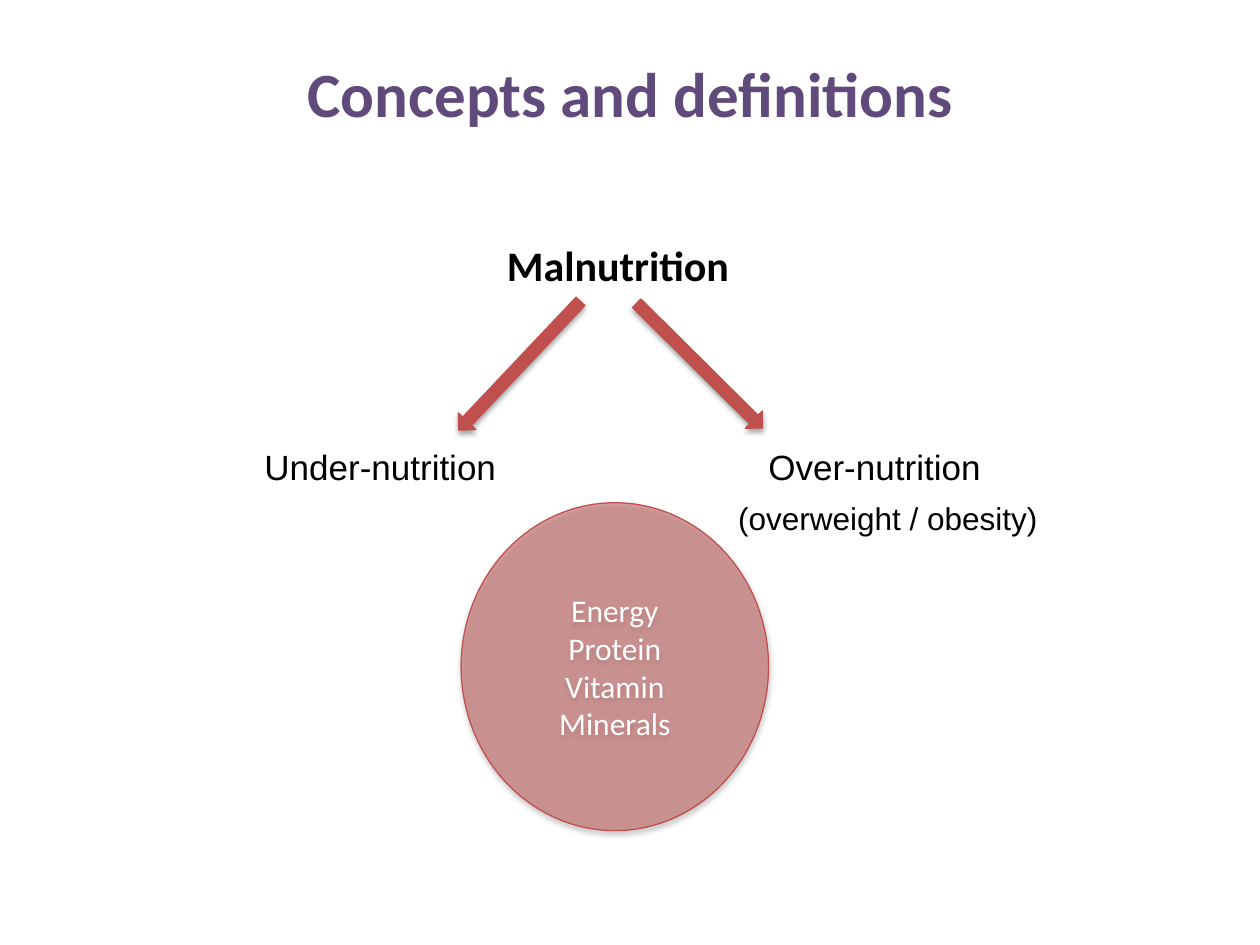
from lxml import etree
from pptx import Presentation, util as u
from pptx.dml import color
from pptx.enum import shapes, text
from pptx.oxml import ns

WIDTH, HEIGHT = 10, 7.5
RED = "C0504D"


def rgb(value):
    """Turn a hex string into a colour."""
    return color.RGBColor.from_string(value)


def part(box, x, y, w, h):
    """Give the box that takes these shares of another box."""
    left, top, width, height = box
    return left + x * width, top + y * height, w * width, h * height


def place(sp, box):
    """Move a shape to a box in inches."""
    for name, value in zip(("left", "top", "width", "height"), box):
        setattr(sp, name, u.Inches(value))


def write(tf, lines, fill, align=None, spacing=None, **font):
    """Write one paragraph per line, each with the same format."""
    tf.word_wrap = True
    for i, line in enumerate(lines):
        p = tf.paragraphs[0] if i == 0 else tf.add_paragraph()
        p.text = line
        for name, value in {"alignment": align, "line_spacing": spacing}.items():
            setattr(p, name, value)
        for r in p.runs:
            r.font.color.rgb = rgb(fill)
            for name, value in font.items():
                setattr(r.font, name, value)


def add_child(parent, tag, **attrs):
    """Append a DrawingML element."""
    return etree.SubElement(parent, ns.qn("a:" + tag), {k: str(v) for k, v in attrs.items()})


def add_text(s, box, lines, **style):
    """Add a text box in black with fixed line spacing."""
    sp = s.shapes.add_textbox(*(u.Inches(v) for v in box))
    write(sp.text_frame, lines, "000000", spacing=u.Pt(28), **style)
    return sp.text_frame


def add_red_shape(s, kind, box, rotation=0, alpha=None):
    """Add a red shape with a soft shadow below it."""
    sp = s.shapes.add_shape(kind, *(u.Inches(v) for v in box))
    sp.rotation = rotation
    sp.fill.solid()
    sp.fill.fore_color.rgb = sp.line.color.rgb = rgb(RED)
    sp.line.width = u.Pt(0.75)
    if alpha:
        tint = sp.fill._xPr.find(ns.qn("a:solidFill"))[0]
        add_child(tint, "alpha", val=alpha * 1000)
    sp.shadow.inherit = False
    effects = sp._element.spPr.find(ns.qn("a:effectLst"))
    shadow = add_child(effects, "outerShdw", blurRad=u.Pt(3.1), dist=u.Pt(1.8),
                       dir=90 * 60000, rotWithShape=0)
    add_child(add_child(shadow, "srgbClr", val="000000"), "alpha", val=35000)
    return sp


def title(s, box):
    """Place and format the title."""
    sp = s.shapes.title
    place(sp, box)
    sp.text_frame.vertical_anchor = text.MSO_ANCHOR.MIDDLE
    write(sp.text_frame, ["Concepts and definitions"], "604A7B",
          align=text.PP_ALIGN.CENTER, name="Calibri", size=u.Pt(36), bold=True)


def branches(s, box):
    """Draw the term, its two arrows and the labels they lead to."""
    add_text(s, part(box, 0.26, 0, 0.3, 0.19), ["Malnutrition"],
             name="Calibri", size=u.Pt(24), bold=True)
    tf = add_text(s, part(box, 0, 0.64, 1, 0.36),
                  ["Under-nutrition\tOver-nutrition", "(overweight / obesity)"],
                  name="Arial", size=u.Pt(20))
    first, second = tf.paragraphs
    tabs = add_child(first._p.get_or_add_pPr(), "tabLst")
    add_child(tabs, "tab", pos=u.Inches(4), algn="l")
    second._p.get_or_add_pPr().set("marL", str(u.Inches(3.76)))
    second.runs[0].font.size = u.Pt(18)
    for x, rotation in ((0.385, 44.8), (0.192, 133.4)):
        add_red_shape(s, shapes.MSO_SHAPE.RIGHT_ARROW,
                      part(box, x, 0.386, 0.19, 0.078), rotation)


def nutrients(s, box):
    """Draw the circle that lists the nutrients."""
    sp = add_red_shape(s, shapes.MSO_SHAPE.OVAL, box, alpha=50)
    sp.text_frame.vertical_anchor = text.MSO_ANCHOR.MIDDLE
    write(sp.text_frame, ["Energy\vProtein", "Vitamin", "Minerals"], "FFFFFF",
          align=text.PP_ALIGN.CENTER, name="Calibri", size=u.Pt(18))


def main():
    """Build the slide and save it."""
    prs = Presentation()
    prs.slide_width, prs.slide_height = u.Inches(WIDTH), u.Inches(HEIGHT)
    s = prs.slides.add_slide(prs.slide_layouts[5])
    page = (0, 0, WIDTH, HEIGHT)
    title(s, part(page, 0.05, 0.04, 0.9, 0.116))
    branches(s, part(page, 0.2, 0.248, 0.74, 0.327))
    nutrients(s, part(page, 0.366, 0.532, 0.244, 0.347))
    prs.save("out.pptx")


if __name__ == "__main__":
    main()
